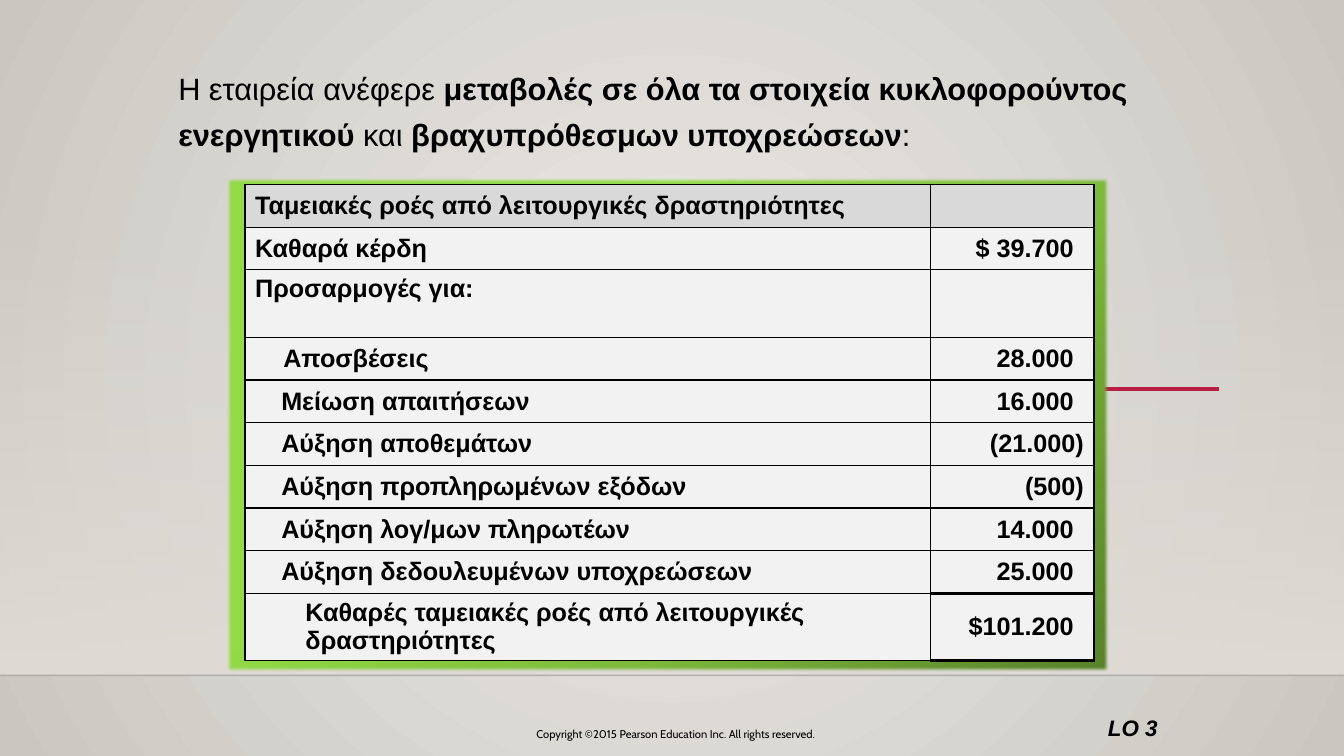
"""Build the slide on cash flows from operating activities."""
from dataclasses import dataclass

import lxml.etree
import pptx
import pptx.dml.color
import pptx.enum.shapes
import pptx.enum.text
import pptx.oxml.ns
import pptx.util

Inches = pptx.util.Inches
Pt = pptx.util.Pt
RGBColor = pptx.dml.color.RGBColor
PP_ALIGN = pptx.enum.text.PP_ALIGN
MSO_ANCHOR = pptx.enum.text.MSO_ANCHOR
qn = pptx.oxml.ns.qn

BLACK = RGBColor(0x00, 0x00, 0x00)
RED = RGBColor(0xB7, 0x1E, 0x42)
HEADER_GREY = RGBColor(0xD9, 0xD9, 0xD9)
BODY_GREY = RGBColor(0xF2, 0xF2, 0xF2)
BACKGROUND_LIGHT = RGBColor(0xEC, 0xEA, 0xE7)
BACKGROUND_DARK = RGBColor(0xCA, 0xC7, 0xC1)
PANEL = RGBColor(0xDF, 0xDB, 0xD5)
GREEN_DARK = RGBColor(0x57, 0x81, 0x2A)
GREEN_MIDDLE = RGBColor(0x7B, 0xB7, 0x3B)
GREEN_LIGHT = RGBColor(0x92, 0xDA, 0x46)

ROW_HEIGHT = Inches(2.54) // 6
TALL_ROW_HEIGHT = Inches(0.67)
THIN, THICK = 1, 2.25


@dataclass
class Stop:
    position: int
    color: RGBColor
    opacity: int = 100


@dataclass
class CashFlowRow:
    label: str
    amount: str = ""
    indent: float = 0
    tall: bool = False
    anchor: MSO_ANCHOR = MSO_ANCHOR.MIDDLE
    amount_top: float = THIN
    amount_bottom: float = THIN


@dataclass
class TextRun:
    text: str
    bold: bool = False


@dataclass
class Caption:
    left: float
    top: float
    width: float
    height: float
    runs: list[TextRun]
    size: float
    font: str = "Arial"
    align: PP_ALIGN = PP_ALIGN.LEFT
    italic: bool = False
    margin: float = 0.05
    line_spacing: float = 1


ROWS = [
    CashFlowRow("Ταμειακές ροές από λειτουργικές δραστηριότητες"),
    CashFlowRow("Καθαρά κέρδη", "$ 39.700"),
    CashFlowRow("Προσαρμογές για:", tall=True, anchor=MSO_ANCHOR.TOP),
    CashFlowRow("Αποσβέσεις", "28.000", 0.28),
    CashFlowRow("Μείωση απαιτήσεων", "16.000", 0.26),
    CashFlowRow("Αύξηση αποθεμάτων", "(21.000)", 0.26),
    CashFlowRow("Αύξηση προπληρωμένων εξόδων", "(500)", 0.26),
    CashFlowRow("Αύξηση λογ/μων πληρωτέων", "14.000", 0.26),
    CashFlowRow("Αύξηση δεδουλευμένων υποχρεώσεων", "25.000", 0.26, amount_bottom=THICK),
    CashFlowRow("Καθαρές ταμειακές ροές από λειτουργικές δραστηριότητες", "$101.200", 0.5,
                tall=True, amount_top=THICK, amount_bottom=THICK),
]

CAPTIONS = [
    Caption(10.75, 7.04, 0.83, 0.37, [TextRun("LO 3", True)], 16,
            align=PP_ALIGN.RIGHT, italic=True),
    Caption(1.67, 0.5, 10, 1.12, [
        TextRun("Η εταιρεία ανέφερε "),
        TextRun("μεταβολές σε όλα τα στοιχεία κυκλοφορούντος ενεργητικού ", True),
        TextRun("και"),
        TextRun(" βραχυπρόθεσμων υποχρεώσεων", True),
        TextRun(":"),
    ], 22, margin=0.1, line_spacing=1.25),
    Caption(4.33, 7.17, 4.75, 0.25,
            [TextRun("Copyright ©2015 Pearson Education Inc. All rights reserved.")],
            8, "Cabin", PP_ALIGN.CENTER),
]


def add_element(parent, tag: str, **attributes):
    """Append a drawing element with the given attributes."""
    return lxml.etree.SubElement(parent, qn(tag),
                                 {name: str(value) for name, value in attributes.items()})


def add_color(parent, color: RGBColor, opacity: int = 100) -> None:
    """Append a colour, translucent where the opacity is below 100."""
    element = add_element(parent, "a:srgbClr", val=color)
    if opacity < 100:
        add_element(element, "a:alpha", val=opacity * 1000)


def set_gradient(fill, gradient, stops: list[Stop], angle: int | None = None) -> None:
    """Fill with a linear gradient, or a circular one when no angle is given."""
    fill.gradient()
    element = gradient.find(".//" + qn("a:gradFill"))
    for child in list(element):
        element.remove(child)
    stop_list = add_element(element, "a:gsLst")
    for stop in stops:
        add_color(add_element(stop_list, "a:gs", pos=stop.position * 1000),
                  stop.color, stop.opacity)
    if angle is None:
        circle = add_element(element, "a:path", path="circle")
        add_element(circle, "a:fillToRect", l=50000, t=50000, r=50000, b=50000)
    else:
        add_element(element, "a:lin", ang=angle * 60000, scaled=0)


def add_panel(slide, left: float, top: float, width: float, height: float,
              stops: list[Stop], angle: int):
    """Add a borderless gradient rectangle."""
    shape = slide.shapes.add_shape(pptx.enum.shapes.MSO_SHAPE.RECTANGLE, Inches(left),
                                   Inches(top), Inches(width), Inches(height))
    set_gradient(shape.fill, shape.element, stops, angle)
    shape.line.fill.background()
    shape.shadow.inherit = False
    return shape


def add_rule(slide, left: float, right: float, y: float, color: RGBColor,
             width: float, opacity: int = 100) -> None:
    """Add a horizontal line."""
    line = slide.shapes.add_connector(pptx.enum.shapes.MSO_CONNECTOR.STRAIGHT,
                                      Inches(left), Inches(y), Inches(right), Inches(y))
    line.line.color.rgb = color
    line.line.width = Pt(width)
    if opacity < 100:
        add_element(line.element.find(".//" + qn("a:srgbClr")), "a:alpha", val=opacity * 1000)
    add_element(line.element.spPr, "a:effectLst")


def format_run(run, font: str, size: float, bold: bool, italic: bool = False) -> None:
    """Set the font of a black run."""
    run.font.name = font
    run.font.size = Pt(size)
    run.font.bold = bold
    run.font.italic = italic
    run.font.color.rgb = BLACK


def add_caption(slide, caption: Caption) -> None:
    """Add a text box of formatted runs."""
    box = slide.shapes.add_textbox(Inches(caption.left), Inches(caption.top),
                                   Inches(caption.width), Inches(caption.height))
    frame = box.text_frame
    frame.word_wrap = True
    frame.margin_top = frame.margin_bottom = Inches(caption.margin)
    paragraph = frame.paragraphs[0]
    paragraph.alignment = caption.align
    paragraph.line_spacing = caption.line_spacing
    for part in caption.runs:
        run = paragraph.add_run()
        run.text = part.text
        format_run(run, caption.font, caption.size, part.bold, caption.italic)


def fill_cell(cell, text: str, fill: RGBColor, anchor: MSO_ANCHOR, align: PP_ALIGN,
              indent: float = 0, top: float = THIN, bottom: float = THIN) -> None:
    """Write a table cell with its fill and borders."""
    cell.vertical_anchor = anchor
    paragraph = cell.text_frame.paragraphs[0]
    paragraph.text = text
    paragraph.alignment = align
    if indent:
        paragraph._p.get_or_add_pPr().set("marL", str(Inches(indent)))
    for run in paragraph.runs:
        format_run(run, "Arial", 18, True)
    properties = cell._tc.get_or_add_tcPr()
    for side, width in (("L", THIN), ("R", THIN), ("T", top), ("B", bottom)):
        border = add_element(properties, f"a:ln{side}", w=Pt(width))
        add_color(add_element(border, "a:solidFill"), BLACK)
    cell.fill.solid()
    cell.fill.fore_color.rgb = fill


def add_cash_flow_table(slide) -> None:
    """Add the table of cash flows."""
    frame = slide.shapes.add_table(len(ROWS), 2, Inches(2.43), Inches(1.83),
                                   Inches(8.42), Inches(4.72))
    table = frame.table
    table.first_row = table.horz_banding = False
    table.columns[0].width, table.columns[1].width = Inches(6.8), Inches(1.62)
    for index, row in enumerate(ROWS):
        table.rows[index].height = TALL_ROW_HEIGHT if row.tall else ROW_HEIGHT
        fill = BODY_GREY if index else HEADER_GREY
        label, amount = table.cell(index, 0), table.cell(index, 1)
        fill_cell(label, row.label, fill, row.anchor, PP_ALIGN.LEFT, row.indent)
        if row.amount and not row.amount.startswith("("):
            amount.margin_right = Inches(0.2)
        fill_cell(amount, row.amount, fill, MSO_ANCHOR.MIDDLE, PP_ALIGN.RIGHT,
                  top=row.amount_top, bottom=row.amount_bottom)


def main() -> None:
    """Build and save the presentation."""
    presentation = pptx.Presentation()
    presentation.slide_width, presentation.slide_height = Inches(13.33), Inches(7.5)
    slide = presentation.slides.add_slide(presentation.slide_layouts[6])
    background = slide.background.fill
    set_gradient(background, slide.element,
                 [Stop(0, BACKGROUND_LIGHT), Stop(100, BACKGROUND_DARK)])
    add_panel(slide, 0, 2.21, 13.33, 4.49, [Stop(0, PANEL, 0), Stop(100, PANEL)], 90)
    add_rule(slide, 0, 13.33, 6.7, BLACK, 1, 20)
    add_rule(slide, 2.64, 12.09, 3.86, RED, 2.5)
    green = add_panel(slide, 2.25, 1.76, 8.75, 4.91, [
        Stop(0, GREEN_DARK), Stop(33, GREEN_MIDDLE), Stop(65, GREEN_LIGHT)], 225)
    add_element(green.element.spPr.find(qn("a:effectLst")), "a:softEdge", rad=Pt(2))
    add_cash_flow_table(slide)
    for caption in CAPTIONS:
        add_caption(slide, caption)
    presentation.save("out.pptx")


if __name__ == "__main__":
    main()
